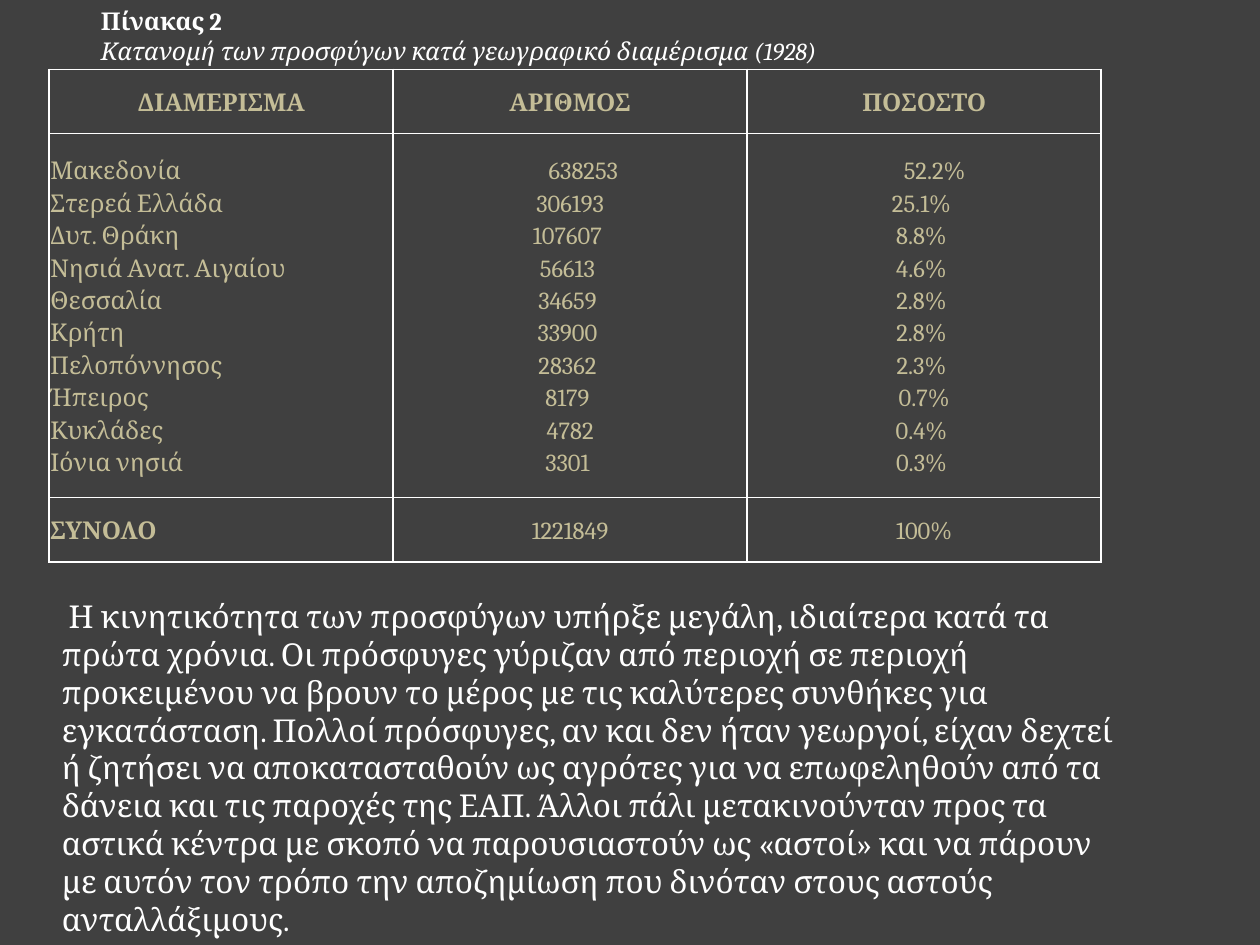
from typing import NamedTuple

from lxml.etree import SubElement
from pptx import Presentation
from pptx.dml.color import RGBColor
from pptx.enum.text import MSO_ANCHOR as Anchor, MSO_AUTO_SIZE as AutoSize, PP_ALIGN as Align
from pptx.oxml.ns import qn
from pptx.util import Inches, Pt

FONT = "Cambria"
WHITE, SAND, CHARCOAL = "FFFFFF", "C4BD97", "404040"


class Region(NamedTuple):
    name: str
    refugees: str
    share: str


class Box(NamedTuple):
    left: float
    top: float
    width: float
    height: float


REGIONS = [
    Region("Μακεδονία", "638253", "52.2% "),
    Region("Στερεά Ελλάδα ", "306193", "25.1% "),
    Region("Δυτ. Θράκη ", "107607 ", "8.8% "),
    Region("Νησιά Ανατ. Αιγαίου ", "56613 ", "4.6% "),
    Region("Θεσσαλία ", "34659 ", "2.8% "),
    Region("Κρήτη ", "33900 ", "2.8% "),
    Region("Πελοπόννησος ", "28362 ", "2.3% "),
    Region("Ήπειρος ", "8179 ", "0.7%"),
    Region("Κυκλάδες ", "4782", "0.4% "),
    Region("Ιόνια νησιά ", "3301 ", "0.3% "),
]
HEADINGS = Region("ΔΙΑΜΕΡΙΣΜΑ", "ΑΡΙΘΜΟΣ", "ΠΟΣΟΣΤΟ")
TOTAL = Region("ΣΥΝΟΛΟ", "1221849", "100%")
COLUMN_WIDTHS = [2.73, 2.81, 2.81]
ROW_HEIGHTS = [0.51, 2.89, 0.51]
CAPTION = "Πίνακας 2"
SUBCAPTION = "Κατανομή των προσφύγων κατά γεωγραφικό διαμέρισμα (1928) "
COMMENTARY = (
    " Η κινητικότητα των προσφύγων υπήρξε μεγάλη, ιδιαίτερα κατά τα πρώτα χρόνια. "
    "Οι πρόσφυγες γύριζαν από περιοχή σε περιοχή προκειμένου να βρουν το μέρος με τις "
    "καλύτερες συνθήκες για εγκατάσταση. Πολλοί πρόσφυγες, αν και δεν ήταν γεωργοί, "
    "είχαν δεχτεί ή ζητήσει να αποκατασταθούν ως αγρότες για να επωφεληθούν από τα "
    "δάνεια και τις παροχές της ΕΑΠ. Άλλοι πάλι μετακινούνταν προς τα αστικά κέντρα με "
    "σκοπό να παρουσιαστούν ως «αστοί» και να πάρουν με αυτόν τον τρόπο την αποζημίωση "
    "που δινόταν στους αστούς ανταλλάξιμους."
)


def rgb(color: str) -> RGBColor:
    return RGBColor.from_string(color)


def set_font(font, size: float, color: str, bold: bool = False) -> None:
    font.name, font.size, font.bold = FONT, Pt(size), bold
    font.color.rgb = rgb(color)


def place(placeholder, box: Box):
    placeholder.left, placeholder.top, placeholder.width, placeholder.height = map(Inches, box)
    frame = placeholder.text_frame
    frame.word_wrap = True
    frame.auto_size = AutoSize.NONE
    frame.vertical_anchor = Anchor.TOP
    paragraph = frame.paragraphs[0]
    paragraph.alignment = Align.LEFT
    paragraph.space_before = Pt(0)
    return paragraph


def add_borders(cell, color: str, width: float) -> None:
    properties = cell._tc.get_or_add_tcPr()
    for position, side in enumerate(("lnL", "lnR", "lnT", "lnB")):
        line = properties.makeelement(qn(f"a:{side}"), {"w": str(Pt(width))})
        fill = SubElement(line, qn("a:solidFill"))
        SubElement(fill, qn("a:srgbClr"), val=color)
        properties.insert(position, line)


def fill_cell(cell, text: str, bold: bool, centred: bool, indented: bool) -> None:
    cell.fill.background()
    add_borders(cell, WHITE, 1)
    cell.vertical_anchor = Anchor.MIDDLE
    cell.margin_left = cell.margin_right = Inches(0.01)
    cell.margin_top = cell.margin_bottom = Inches(0.01)
    paragraph = cell.text_frame.paragraphs[0]
    paragraph.text = text
    paragraph.alignment = Align.CENTER if centred else Align.LEFT
    paragraph.line_spacing = 1.15
    set_font(paragraph.font, 14, SAND, bold)
    if indented:
        paragraph.space_after = Pt(10)
        paragraph._p.get_or_add_pPr().set("indent", str(Inches(0.21)))


def add_region_table(slide, box: Box) -> None:
    details = Region(*("\n".join(column) for column in zip(*REGIONS)))
    rows = [HEADINGS, details, TOTAL]
    table = slide.shapes.add_table(len(rows), len(HEADINGS), *map(Inches, box)).table
    for column, width in zip(table.columns, COLUMN_WIDTHS):
        column.width = Inches(width)
    for row, height, texts in zip(table.rows, ROW_HEIGHTS, rows):
        row.height = Inches(height)
        for index, (cell, text) in enumerate(zip(row.cells, texts)):
            bold = texts is HEADINGS or (texts is TOTAL and index == 0)
            centred = texts is HEADINGS or index > 0
            fill_cell(cell, text, bold, centred, texts is details and index > 0)


def main() -> None:
    deck = Presentation()
    deck.slide_width, deck.slide_height = Inches(10), Inches(7.5)
    slide = deck.slides.add_slide(deck.slide_layouts[1])
    slide.background.fill.solid()
    slide.background.fill.fore_color.rgb = rgb(CHARCOAL)

    commentary = place(slide.placeholders[1], Box(0.39, 4.69, 8.67, 5.25))
    commentary.text = COMMENTARY
    set_font(commentary.font, 18, WHITE)
    commentary_layout = commentary._p.get_or_add_pPr()
    commentary_layout.set("marL", "0")
    commentary_layout.set("indent", "0")
    commentary_layout.insert_element_before(
        commentary_layout.makeelement(qn("a:buNone"), {}), "a:tabLst", "a:defRPr", "a:extLst"
    )

    add_region_table(slide, Box(0.39, 0.55, sum(COLUMN_WIDTHS), sum(ROW_HEIGHTS)))

    caption = place(slide.shapes.title, Box(0.7, 0, 8.91, 0.57))
    caption_run = caption.add_run()
    caption_run.text = CAPTION
    set_font(caption_run.font, 14, WHITE, bold=True)
    caption.add_line_break()
    subcaption_run = caption.add_run()
    subcaption_run.text = SUBCAPTION
    set_font(subcaption_run.font, 14, WHITE)
    subcaption_run.font.italic = True

    deck.save("out.pptx")


if __name__ == "__main__":
    main()
